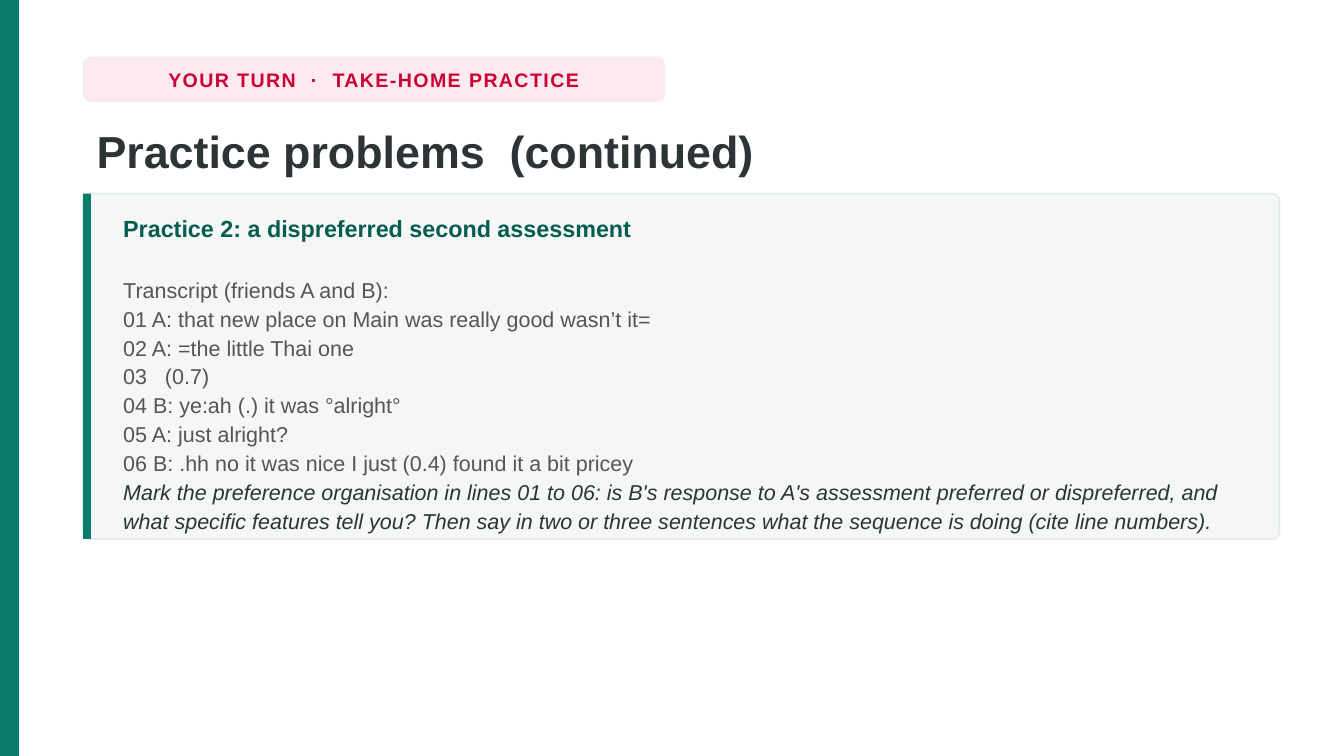
from pptx import Presentation
from pptx.dml.color import RGBColor
from pptx.enum.shapes import MSO_SHAPE as Shape
from pptx.enum.text import MSO_ANCHOR as Anchor, PP_ALIGN as Align
from pptx.util import Cm, Pt

COLORS = {
    "green": "0B7B6B", "heading": "065C50", "ink": "2D3436", "body": "555555",
    "red": "CC0033", "pink": "FDEAEF", "card": "F4F7F6", "border": "E8ECEE",
}
TRANSCRIPT = [
    "Transcript (friends A and B):",
    "01 A: that new place on Main was really good wasn’t it=",
    "02 A: =the little Thai one",
    "03   (0.7)",
    "04 B: ye:ah (.) it was °alright°",
    "05 A: just alright?",
    "06 B: .hh no it was nice I just (0.4) found it a bit pricey",
]
TASK = (
    "Mark the preference organisation in lines 01 to 06: is B's response to A's "
    "assessment preferred or dispreferred, and what specific features tell you? "
    "Then say in two or three sentences what the sequence is doing "
    "(cite line numbers)."
)


def rgb(color):
    return RGBColor.from_string(COLORS[color])


def style(paragraph, size, color, bold=False, italic=False, spacing=None):
    font = paragraph.font
    font.name, font.size = "Arial", Pt(size)
    font.bold, font.italic = bold, italic
    font.color.rgb = rgb(color)
    paragraph.line_spacing = spacing


def add_panel(slide, box, fill, border=None, radius=None):
    """Add a flat rectangle, with rounded corners if a radius ratio is given."""
    kind = Shape.RECTANGLE if radius is None else Shape.ROUNDED_RECTANGLE
    panel = slide.shapes.add_shape(kind, *box)
    panel.shadow.inherit = False
    if radius is not None:
        panel.adjustments[0] = radius
    panel.fill.solid()
    panel.fill.fore_color.rgb = rgb(fill)
    if border:
        panel.line.color.rgb = rgb(border)
        panel.line.width = Pt(1)
    else:
        panel.line.fill.background()
    return panel


def add_badge(slide, box, label):
    frame = add_panel(slide, box, "pink", radius=0.176).text_frame
    frame.word_wrap = False
    frame.vertical_anchor = Anchor.MIDDLE
    paragraph = frame.paragraphs[0]
    paragraph.alignment = Align.CENTER
    run = paragraph.add_run()
    run.text = label
    run.font._element.set("spc", "80")
    style(paragraph, 10.5, "red", bold=True)


def set_title(slide, box, text):
    title = slide.shapes.title
    title.left, title.top, title.width, title.height = box
    frame = title.text_frame
    frame.text = text
    frame.vertical_anchor = Anchor.MIDDLE
    paragraph = frame.paragraphs[0]
    paragraph.alignment = Align.LEFT
    style(paragraph, 24, "ink", bold=True, spacing=1.02)


def add_practice_card(slide, box, heading, transcript, task):
    left, top, width, height = box
    add_panel(slide, box, "card", border="border", radius=0.019)
    add_panel(slide, (left, top, Cm(0.15), height), "green")

    inset_x, inset_y = Cm(0.51), Cm(0.2)
    frame = slide.shapes.add_textbox(
        left + inset_x, top + inset_y, width - Cm(1.07), height - 2 * inset_y
    ).text_frame
    frame.word_wrap = True
    heading_line = frame.paragraphs[0]
    heading_line.text = heading
    style(heading_line, 12.5, "heading", bold=True, spacing=1.12)
    heading_line.space_after = Pt(17)
    for line in transcript:
        utterance = frame.add_paragraph()
        utterance.text = line
        style(utterance, 11.5, "body", spacing=1.12)
    question = frame.add_paragraph()
    question.text = task
    style(question, 11.5, "ink", italic=True, spacing=1.12)


def build_practice_slide(deck):
    slide = deck.slides.add_slide(deck.slide_layouts[5])
    left, width = Cm(1.57), Cm(22.61)
    add_panel(slide, (0, 0, Cm(0.36), deck.slide_height), "green")
    add_badge(slide, (left, Cm(1.07), Cm(11), Cm(0.86)),
              "YOUR TURN  ·  TAKE-HOME PRACTICE")
    set_title(slide, (left, Cm(2.13), width, Cm(1.42)),
              "Practice problems  (continued)")
    add_practice_card(slide, (left, Cm(3.66), width, Cm(6.53)),
                      "Practice 2: a dispreferred second assessment",
                      TRANSCRIPT, TASK)


def main():
    deck = Presentation()
    deck.slide_width, deck.slide_height = Cm(25.4), Cm(14.29)
    build_practice_slide(deck)
    deck.save("out.pptx")


if __name__ == "__main__":
    main()
